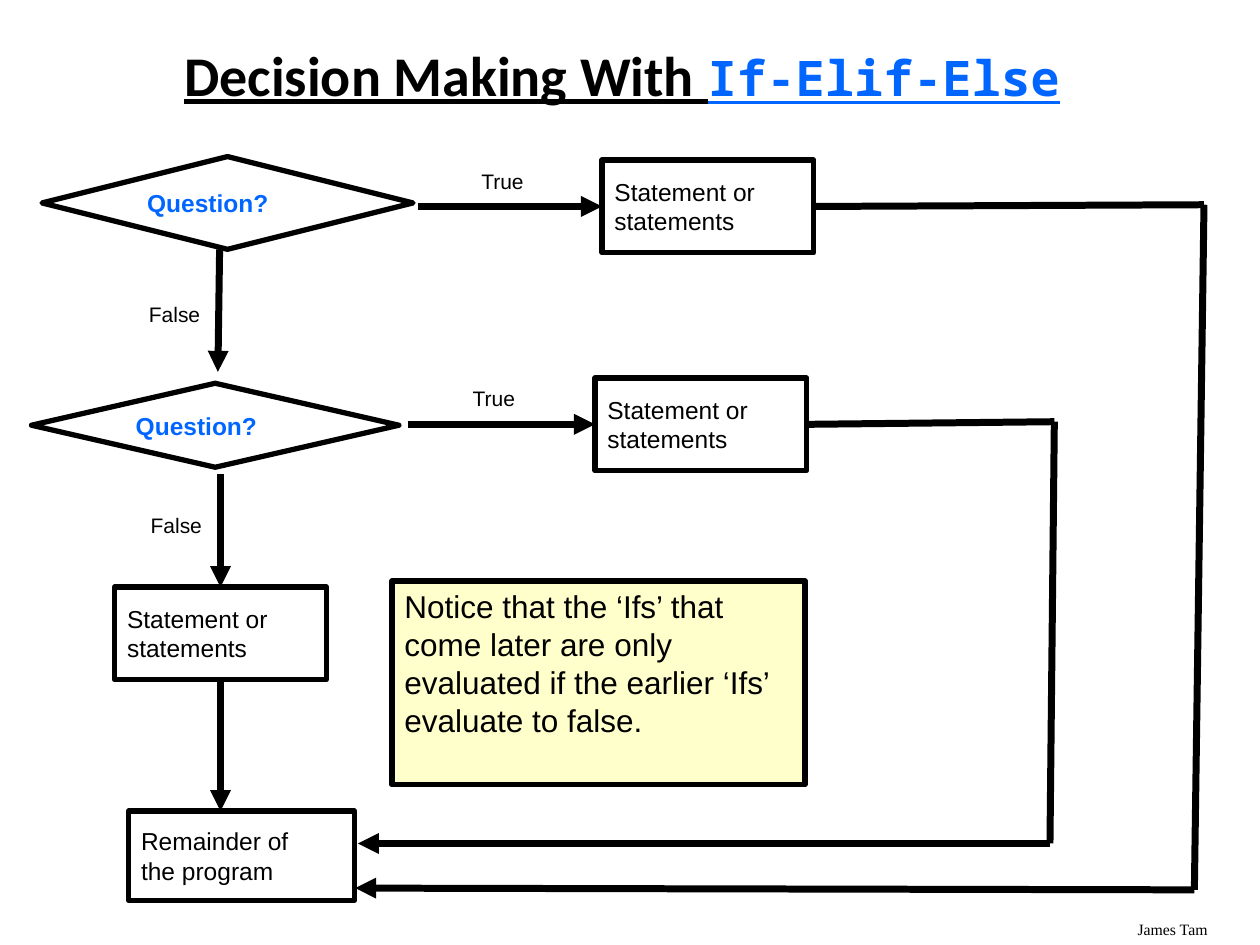
from dataclasses import dataclass

from lxml.etree import SubElement
from pptx import Presentation
from pptx.dml.color import RGBColor
from pptx.enum.shapes import MSO_CONNECTOR as Connector, MSO_SHAPE as Shape
from pptx.enum.text import MSO_ANCHOR as Anchor, MSO_AUTO_SIZE as AutoSize, PP_ALIGN as Align
from pptx.oxml.ns import qn
from pptx.util import Pt

TOP, LEFT, BOTTOM, RIGHT = range(4)


@dataclass(frozen=True)
class Theme:
    ink: RGBColor = RGBColor(0x00, 0x00, 0x00)
    accent: RGBColor = RGBColor(0x00, 0x66, 0xFF)
    note_fill: RGBColor = RGBColor(0xFF, 0xFF, 0xCC)
    title_font: str = "Calibri"
    code_font: str = "Noto Sans Mono"
    body_font: str = "Arial"
    credit_font: str = "Times New Roman"
    title_size: int = 32
    code_size: int = 28
    note_size: int = 18
    box_size: int = 14
    label_size: int = 12
    credit_size: int = 9
    outline: int = 3
    flow_line: int = 4


class FlowSlide:
    """Draws flowchart elements on one slide; all lengths are in points."""

    def __init__(self, slide, theme):
        self.slide = slide
        self.theme = theme

    def style_font(self, font, name, size, color, bold=False):
        font.name, font.size, font.bold = name, Pt(size), bold
        font.color.rgb = color

    def set_text(self, shape, lines, size, color=None, bold=False, anchor=Anchor.MIDDLE, name=None):
        frame = shape.text_frame
        frame.word_wrap = True
        frame.vertical_anchor = anchor
        frame.text = "\n".join(lines)
        for para in frame.paragraphs:
            para.alignment = Align.LEFT
            self.style_font(para.font, name or self.theme.body_font, size,
                            color or self.theme.ink, bold)

    def title(self, area, plain, code):
        theme = self.theme
        title = self.slide.shapes.title
        title.left, title.top, title.width, title.height = map(Pt, area)
        frame = title.text_frame
        frame.auto_size = AutoSize.NONE
        frame.vertical_anchor = Anchor.MIDDLE
        para = frame.paragraphs[0]
        para.alignment = Align.CENTER
        para.line_spacing = 0.9
        for text, name, size, color in (
            (plain, theme.title_font, theme.title_size, theme.ink),
            (code, theme.code_font, theme.code_size, theme.accent),
        ):
            span = para.add_run()
            span.text = text
            self.style_font(span.font, name, size, color, bold=True)
            span.font.underline = True

    def outlined(self, kind, area, fill=None):
        shape = self.slide.shapes.add_shape(kind, *map(Pt, area))
        shape.shadow.inherit = False
        if fill is None:
            shape.fill.background()
        else:
            shape.fill.solid()
            shape.fill.fore_color.rgb = fill
        shape.line.color.rgb = self.theme.ink
        shape.line.width = Pt(self.theme.outline)
        return shape

    def question(self, area):
        diamond = self.outlined(Shape.DIAMOND, area)
        self.set_text(diamond, ["Question?"], self.theme.box_size, self.theme.accent, bold=True)

    def step(self, area, lines=("Statement or", "statements")):
        box = self.outlined(Shape.RECTANGLE, area)
        self.set_text(box, lines, self.theme.box_size)
        return box

    def note(self, area, text):
        box = self.outlined(Shape.RECTANGLE, area, self.theme.note_fill)
        self.set_text(box, [text], self.theme.note_size, anchor=Anchor.TOP)

    def label(self, area, text, size=None, name=None):
        box = self.slide.shapes.add_textbox(*map(Pt, area))
        self.set_text(box, [text], size or self.theme.label_size, anchor=Anchor.TOP, name=name)

    def flow(self, start, end, arrow=True, begin_at=None, end_at=None):
        """Draw a line; begin_at and end_at are (box, side) pairs to join."""
        line = self.slide.shapes.add_connector(Connector.STRAIGHT, *map(Pt, (*start, *end)))
        if begin_at:
            line.begin_connect(*begin_at)
        if end_at:
            line.end_connect(*end_at)
        line.line.color.rgb = self.theme.ink
        line.line.width = Pt(self.theme.flow_line)
        properties = line._element.spPr
        if arrow:
            SubElement(properties.find(qn("a:ln")), qn("a:tailEnd"), type="triangle")
        SubElement(properties, qn("a:effectLst"))

    def return_path(self, box, start, corner, turn, end):
        """Lead from the right side of a box around to the end of the program."""
        self.flow(start, corner, arrow=False, begin_at=(box, RIGHT))
        self.flow(corner, turn, arrow=False)
        self.flow(turn, end)


def main():
    theme = Theme()
    deck = Presentation()
    deck.slide_width, deck.slide_height = Pt(720), Pt(540)
    page = FlowSlide(deck.slides.add_slide(deck.slide_layouts[5]), theme)

    page.title((34, 24, 643, 41), "Decision Making With ", "If-Elif-Else")
    page.label((643, 522, 72, 18), "James Tam", theme.credit_size, theme.credit_font)

    page.question((24, 89.5, 212, 53))
    page.question((18, 219, 210, 48))
    first = page.step((344, 91.5, 121, 53))
    second = page.step((340, 216, 121, 53))
    otherwise = page.step((65.5, 335.5, 121, 53))
    page.step((73.5, 463.5, 129, 51), ("Remainder of", "the program"))

    page.label((268, 93, 44, 22), "True")
    page.label((263, 217, 44, 22), "True")
    page.label((78, 169, 46, 22), "False")
    page.label((79, 289.5, 46, 22), "False")

    page.flow((239, 118), (344, 118), end_at=(first, LEFT))
    page.flow((233, 242.5), (340, 242.5), end_at=(second, LEFT))
    page.flow((125.5, 142.5), (124.5, 212.5))
    page.flow((126, 271), (126, 335.5), end_at=(otherwise, TOP))
    page.flow((126, 388.5), (126, 463.5), begin_at=(otherwise, BOTTOM))

    page.return_path(first, (465, 118), (688, 117), (682.5, 508.5), (203, 507.5))
    page.return_path(second, (461, 242.5), (602.5, 241), (600, 482), (204.5, 482))

    page.note((224, 332, 236, 116.5),
              "Notice that the ‘Ifs’ that come later are only evaluated "
              "if the earlier ‘Ifs’ evaluate to false.")
    deck.save("out.pptx")


if __name__ == "__main__":
    main()
